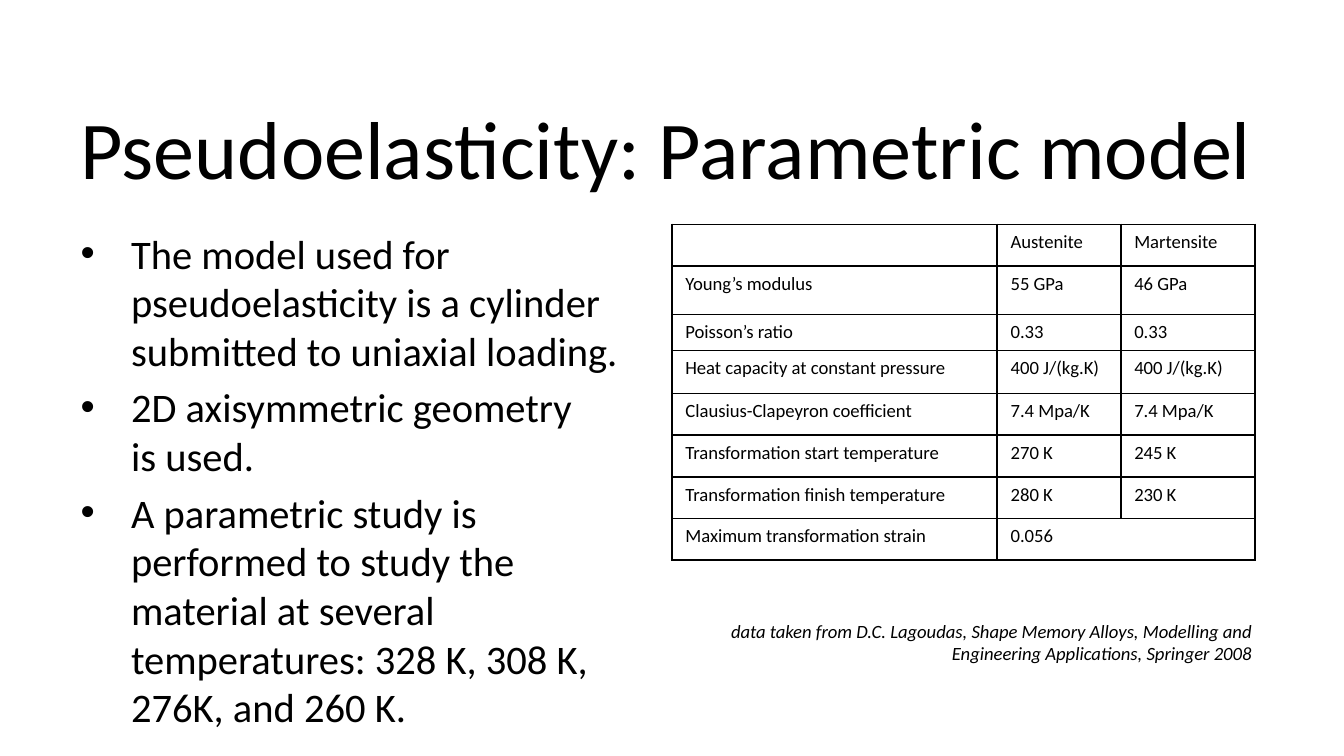
from lxml.etree import SubElement as Sub
from pptx import Presentation
from pptx.dml.color import RGBColor
from pptx.enum.text import MSO_ANCHOR as Anchor, MSO_AUTO_SIZE as Fit, PP_ALIGN as Align
from pptx.oxml.ns import qn
from pptx.util import Inches, Pt

BLACK = RGBColor(0, 0, 0)
WHITE = RGBColor(255, 255, 255)

TITLE = "Pseudoelasticity: Parametric model"
POINTS = [
    "The model used for pseudoelasticity is a cylinder submitted to uniaxial loading.",
    "2D axisymmetric geometry \vis used.",
    "A parametric study is performed to study the material at several "
    "temperatures: 328 K, 308 K, 276K, and 260 K.",
]
ROWS = [
    ("", "Austenite", "Martensite"),
    ("Young’s modulus", "55 GPa", "46 GPa"),
    ("Poisson’s ratio", "0.33", "0.33"),
    ("Heat capacity at constant pressure", "400 J/(kg.K)", "400 J/(kg.K)"),
    ("Clausius-Clapeyron coefficient", "7.4 Mpa/K", "7.4 Mpa/K"),
    ("Transformation start temperature", "270 K", "245 K"),
    ("Transformation finish temperature", "280 K", "230 K"),
    ("Maximum transformation strain", "0.056", ""),
]
WIDTHS = [2.42, 0.92, 1]
HEIGHTS = [0.31, 0.36, 0.26, 0.32] + [0.31] * 4
SOURCE = ("data taken from D.C. Lagoudas, Shape Memory Alloys, Modelling and "
          "Engineering Applications, Springer 2008")


class Deck:
    """Holds the text style and the current slide, and adds elements to it."""

    def __init__(self, show):
        self.font = {"name": "Calibri"}
        self.slide = show.slides.add_slide(show.slide_layouts[1])

    def style(self, para, size, **extra):
        form = {**self.font, "size": Pt(size), **extra}
        for run in para.runs:
            for key, val in form.items():
                setattr(run.font, key, val)
            run.font.color.rgb = BLACK

    def place(self, shape, box):
        for key, val in zip(("left", "top", "width", "height"), box):
            setattr(shape, key, Inches(val))
        shape.text_frame.auto_size = Fit.NONE
        return shape.text_frame

    def title(self, text, box):
        frame = self.place(self.slide.shapes.title, box)
        frame.text = text
        frame.vertical_anchor = Anchor.MIDDLE
        para = frame.paragraphs[0]
        para.alignment = Align.LEFT
        self.style(para, 44)

    def list(self, items, box):
        frame = self.place(self.slide.placeholders[1], box)
        frame.text = "\n".join(items)
        for num, para in enumerate(frame.paragraphs):
            para.space_before = Pt(4.3 if num else 0)
            self.style(para, 21.7)

    def cell(self, cell, text):
        cell.text = text
        para = cell.text_frame.paragraphs[0]
        self.style(para, 10)
        if not text:
            para._p.get_or_add_endParaRPr().set("sz", "1000")
        props = cell._tc.get_or_add_tcPr()
        for side in "LRTB":
            line = Sub(props, qn(f"a:ln{side}"), w=str(Pt(1)))
            Sub(Sub(line, qn("a:solidFill")), qn("a:srgbClr"), val=str(BLACK))
        cell.fill.solid()
        cell.fill.fore_color.rgb = WHITE

    def table(self, rows, widths, heights, left, top):
        size = map(Inches, (left, top, sum(widths), sum(heights)))
        grid = self.slide.shapes.add_table(len(rows), len(widths), *size).table
        grid.first_row = grid.horz_banding = False
        for col, width in zip(grid.columns, widths):
            col.width = Inches(width)
        for row, height, texts in zip(grid.rows, heights, rows):
            row.height = Inches(height)
            for cell, text in zip(row.cells, texts):
                self.cell(cell, text)
        last = len(rows) - 1
        grid.cell(last, 1).merge(grid.cell(last, 2))

    def note(self, text, box):
        frame = self.slide.shapes.add_textbox(*map(Inches, box)).text_frame
        frame.word_wrap = True
        frame.auto_size = Fit.SHAPE_TO_FIT_TEXT
        frame.text = text
        para = frame.paragraphs[0]
        para.alignment = Align.RIGHT
        self.style(para, 10, italic=True)


def main():
    show = Presentation()
    show.slide_width = Inches(10)
    show.slide_height = show.slide_width * 9 // 16
    deck = Deck(show)
    deck.title(TITLE, (0.5, 0.62, 9, 0.94))
    deck.list(POINTS, (0.5, 1.65, 4.42, 3.42))
    deck.table(ROWS, WIDTHS, HEIGHTS, 5, 1.67)
    deck.note(SOURCE, (5.08, 4.56, 4.33, 0.44))
    show.save("out.pptx")


if __name__ == "__main__":
    main()
